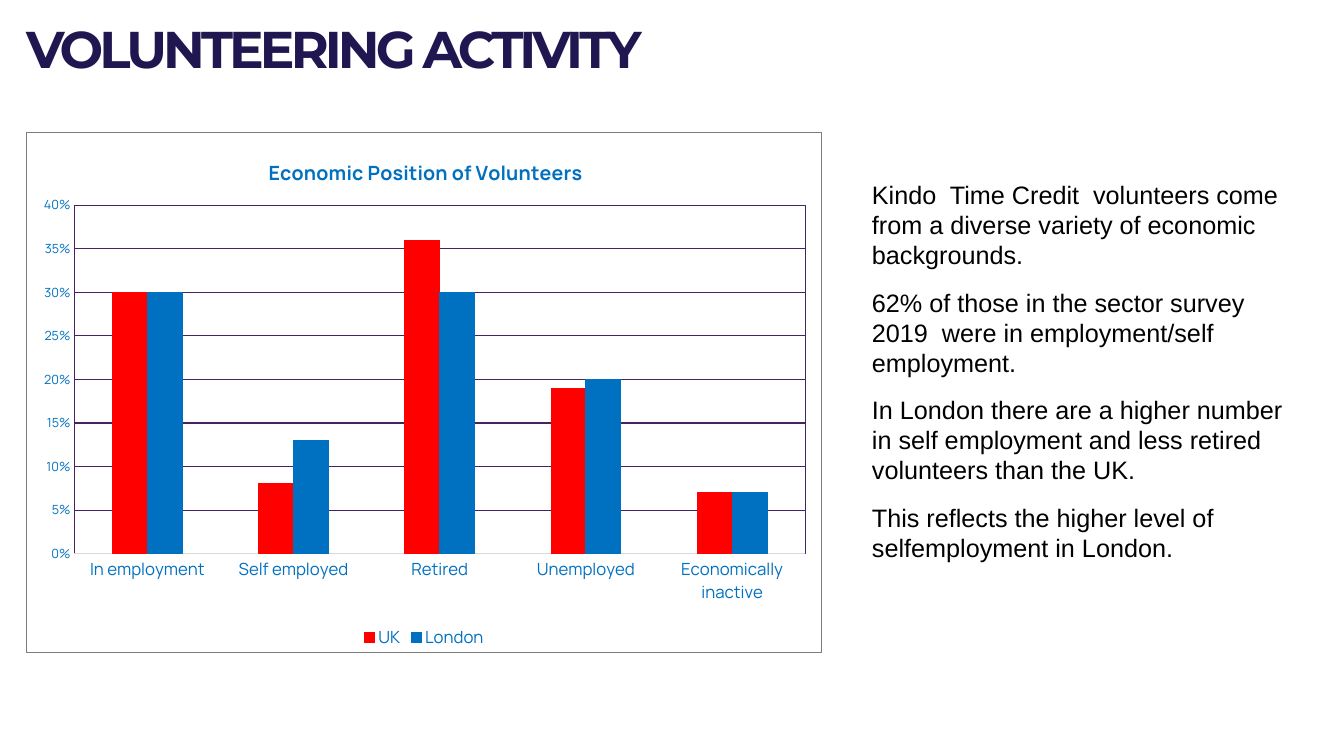
import pptx
import pptx.util
import pptx.chart.data
import pptx.dml.color
import pptx.enum.chart
import pptx.enum.text
import pptx.oxml
from pptx.oxml.ns import nsdecls

Inches, Pt = pptx.util.Inches, pptx.util.Pt

TITLE = "VOLUNTEERING ACTIVITY"
CHART_TITLE = "Economic Position of Volunteers"
CATEGORIES = ["In employment", "Self employed", "Retired", "Unemployed",
              "Economically inactive"]
SERIES = [("UK", "FF0000", [0.30, 0.08, 0.36, 0.19, 0.07]),
          ("London", "0070C0", [0.30, 0.13, 0.30, 0.20, 0.07])]
NOTES = [
    "Kindo  Time Credit  volunteers come from a diverse variety of economic backgrounds.",
    "62% of those in the sector survey 2019  were in employment/self employment.",
    "In London there are a higher number in self employment and less retired volunteers than the UK.",
    "This reflects the higher level of selfemployment in London.",
]
BOXES = {"title": (0.26, 0.33, 9.12, 0.99),
         "chart": (0.26, 1.31, 7.89, 5.17),
         "notes": (8.55, 1.73, 4.34, 3.94)}
BLUE, PURPLE, PALE, GREY = "0070C0", "472364", "D9D9D9", "7C7C7C"
TITLE_FONT = {"name": "Montserrat", "size": Pt(36.9), "bold": True}
NOTES_FONT = {"name": "Arial", "size": Pt(18)}
CHART_FONT = {"name": "Manrope", "size": Pt(12), "bold": False}
AXIS_FONT = {**CHART_FONT, "size": Pt(9)}
HEADING_FONT = {**CHART_FONT, "size": Pt(14), "bold": True}


def rgb(value):
    return pptx.dml.color.RGBColor.from_string(value)


def apply(target, values):
    for name, value in values.items():
        setattr(target, name, value)


def style(font, values, color):
    apply(font, values)
    font.color.rgb = rgb(color)


def outline(line, color):
    line.color.rgb = rgb(color)
    line.width = Pt(0.75)


def place(name):
    return [Inches(v) for v in BOXES[name]]


def border_xml(color):
    return pptx.oxml.parse_xml(
        f'<c:spPr {nsdecls("c", "a")}><a:noFill/><a:ln w="9525"><a:solidFill>'
        f'<a:srgbClr val="{color}"/></a:solidFill></a:ln></c:spPr>')


def layout_xml(target, **position):
    modes = [("xMode", "edge"), ("yMode", "edge"), *position.items()]
    inner = "".join(f'<c:{k} val="{v}"/>' for k, v in modes)
    kind = f'<c:layoutTarget val="{target}"/>' if target else ""
    return pptx.oxml.parse_xml(
        f'<c:layout {nsdecls("c")}><c:manualLayout>{kind}{inner}'
        '</c:manualLayout></c:layout>')


def add_title(s):
    sp = s.shapes.title
    apply(sp, dict(zip(("left", "top", "width", "height"), place("title"))))
    tf = sp.text_frame
    apply(tf, {"margin_left": 0, "margin_top": 0, "margin_right": 0, "margin_bottom": 0,
               "word_wrap": True, "vertical_anchor": pptx.enum.text.MSO_ANCHOR.TOP,
               "auto_size": pptx.enum.text.MSO_AUTO_SIZE.NONE})
    p = tf.paragraphs[0]
    apply(p, {"alignment": pptx.enum.text.PP_ALIGN.LEFT, "line_spacing": Pt(32.3)})
    r = p.add_run()
    r.text = TITLE
    style(r.font, TITLE_FONT, "201751")
    r.font._element.set("spc", "-280")


def add_chart(s):
    data = pptx.chart.data.CategoryChartData(number_format="0%")
    data.categories = CATEGORIES
    for name, _, values in SERIES:
        data.add_series(name, values)
    kind = pptx.enum.chart.XL_CHART_TYPE.COLUMN_CLUSTERED
    chart = s.shapes.add_chart(kind, *place("chart"), data).chart
    style(chart.font, CHART_FONT, BLUE)

    tf = chart.chart_title.text_frame
    r = tf.paragraphs[0].add_run()
    r.text = CHART_TITLE
    style(r.font, HEADING_FONT, BLUE)
    title = chart.chart_title._element
    for old in title.findall(pptx.oxml.ns.qn("c:layout")):
        title.remove(old)
    title.insert(1, layout_xml("", x=0.3, y=0.04))
    chart.chart_title.include_in_layout = False

    plot = chart.plots[0]
    apply(plot, {"gap_width": 219, "overlap": 0, "vary_by_categories": False})
    for series, (_, color, _) in zip(plot.series, SERIES):
        series.format.fill.solid()
        series.format.fill.fore_color.rgb = rgb(color)
        outline(series.format.line, color)

    none = pptx.enum.chart.XL_TICK_MARK.NONE
    cat, val = chart.category_axis, chart.value_axis
    for axis, font in ((cat, CHART_FONT), (val, AXIS_FONT)):
        apply(axis, {"major_tick_mark": none, "minor_tick_mark": none})
        style(axis.tick_labels.font, font, BLUE)
    outline(cat.format.line, PALE)
    val.format.line.fill.background()
    apply(val, {"minimum_scale": 0, "maximum_scale": 0.4, "major_unit": 0.05})
    apply(val.tick_labels, {"number_format": "0%", "number_format_is_linked": False})
    outline(val.major_gridlines.format.line, PURPLE)

    chart.has_legend = True
    apply(chart.legend, {"position": pptx.enum.chart.XL_LEGEND_POSITION.BOTTOM,
                         "include_in_layout": False})
    style(chart.legend.font, CHART_FONT, BLUE)

    area = chart._chartSpace.chart.plotArea
    for old in area.findall(pptx.oxml.ns.qn("c:layout")):
        area.remove(old)
    area.insert(0, layout_xml("inner", x=0.06, y=0.14, w=0.92, h=0.67))
    area.append(border_xml(PURPLE))
    chart._chartSpace.chart.addnext(border_xml(GREY))


def add_notes(s):
    tf = s.shapes.add_textbox(*place("notes")).text_frame
    apply(tf, {"word_wrap": True,
               "auto_size": pptx.enum.text.MSO_AUTO_SIZE.SHAPE_TO_FIT_TEXT})
    for i, text in enumerate(NOTES):
        p = tf.add_paragraph() if i else tf.paragraphs[0]
        p.space_after = Pt(12)
        r = p.add_run()
        r.text = text
        style(r.font, NOTES_FONT, "000000")


def main():
    prs = pptx.Presentation()
    apply(prs, {"slide_width": Inches(13.33), "slide_height": Inches(7.5)})
    s = prs.slides.add_slide(prs.slide_layouts[5])
    add_title(s)
    add_chart(s)
    add_notes(s)
    prs.save("out.pptx")


if __name__ == "__main__":
    main()
